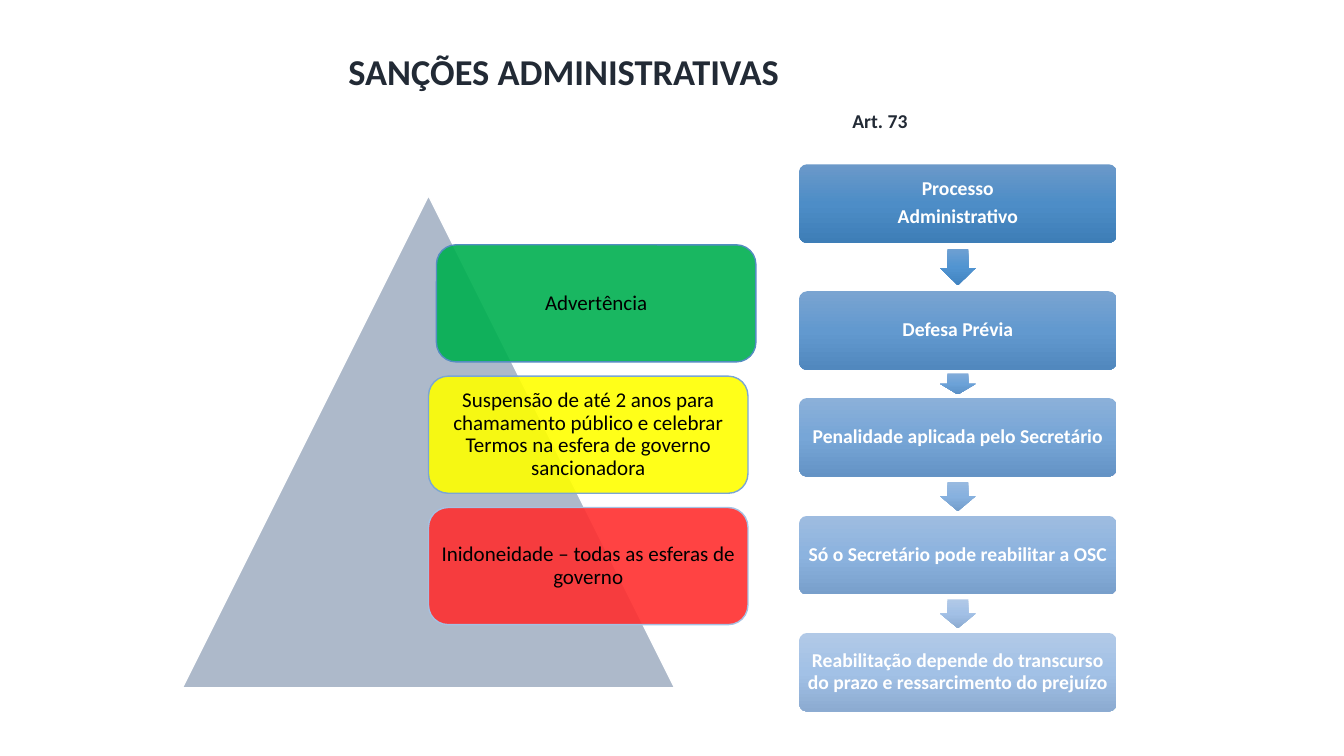
from copy import deepcopy

from lxml.etree import SubElement
from pptx import Presentation
from pptx.dml.color import RGBColor
from pptx.enum.shapes import MSO_SHAPE
from pptx.enum.text import MSO_ANCHOR, MSO_AUTO_SIZE, PP_ALIGN
from pptx.oxml.ns import qn
from pptx.util import Cm, Pt


def color(value):
    return RGBColor.from_string(value)


class SlideBuilder:
    font_name = "Calibri"
    inset = Cm(0.15)

    def __init__(self, slide):
        self.slide = slide

    def shape(self, kind, left, top, width, height, adjustments=()):
        shape = self.slide.shapes.add_shape(kind, Cm(left), Cm(top), Cm(width), Cm(height))
        shape.shadow.inherit = False
        for index, value in enumerate(adjustments):
            shape.adjustments[index] = value
        return shape

    def solid(self, shape, fill, line, opacity=100):
        shape.fill.solid()
        shape.fill.fore_color.rgb = color(fill)
        if opacity < 100:
            rgb = shape._element.spPr.find(qn("a:solidFill")).find(qn("a:srgbClr"))
            SubElement(rgb, qn("a:alpha"), val=str(opacity * 1000))
        shape.line.color.rgb = color(line)
        shape.line.width = Pt(1)

    def gradient(self, shape, colors):
        shape.fill.gradient()
        shape.fill.gradient_angle = 270
        stop_list = shape._element.spPr.find(qn("a:gradFill")).find(qn("a:gsLst"))
        stop_list.append(deepcopy(stop_list[0]))
        for stop, position, value in zip(shape.fill.gradient_stops, (0, 0.5, 1), colors):
            stop.position = position
            stop.color.rgb = color(value)
        shape.line.fill.background()

    def style(self, paragraph, size, font_color, bold):
        paragraph.font.name = self.font_name
        paragraph.font.size = Pt(size)
        paragraph.font.bold = bold
        paragraph.font.color.rgb = color(font_color)

    def label(self, shape, lines, size, font_color, bold=False):
        frame = shape.text_frame
        frame.word_wrap = True
        frame.vertical_anchor = MSO_ANCHOR.MIDDLE
        frame.margin_left = frame.margin_right = self.inset
        frame.margin_top = frame.margin_bottom = self.inset
        frame.text = "\n".join(lines)
        for paragraph in frame.paragraphs:
            paragraph.alignment = PP_ALIGN.CENTER
            paragraph.line_spacing = 0.9
            paragraph.space_after = Pt(5)
            self.style(paragraph, size, font_color, bold)

    def triangle(self, left, top, side):
        triangle = self.shape(MSO_SHAPE.ISOSCELES_TRIANGLE, left, top, side, side)
        self.solid(triangle, "ADB9CA", "FFFFFF")

    def sanction(self, left, top, text, fill, line):
        card = self.shape(MSO_SHAPE.ROUNDED_RECTANGLE, left, top, 8.05, 2.95)
        self.solid(card, fill, line, opacity=90)
        self.label(card, [text], 15, "000000")

    def step(self, left, top, width, height, lines, colors):
        box = self.shape(MSO_SHAPE.ROUNDED_RECTANGLE, left, top, width, height, (0.1,))
        self.gradient(box, colors)
        self.label(box, lines, 14, "FFFFFF", bold=True)

    def down_arrow(self, center, gap_top, gap_bottom, colors):
        gap = gap_bottom - gap_top
        length, width = 0.75 * gap, 0.89
        arrow = self.shape(MSO_SHAPE.DOWN_ARROW, center - width / 2,
                           gap_top + (gap - length) / 2, width, length,
                           (0.6, 0.5 * min(1, width / length)))
        self.gradient(arrow, colors)

    def heading(self, title, article):
        box = self.slide.shapes.add_textbox(Cm(8.53), Cm(1.12), Cm(15.4), Cm(2.49))
        frame = box.text_frame
        frame.word_wrap = True
        frame.auto_size = MSO_AUTO_SIZE.SHAPE_TO_FIT_TEXT
        frame.text = f"{title}\n{article}"
        title_paragraph, article_paragraph = frame.paragraphs
        article_paragraph._p.get_or_add_pPr().set("marL", str(Cm(12.7)))
        article_paragraph.space_before = Pt(11)
        self.style(title_paragraph, 26, "222A35", True)
        self.style(article_paragraph, 14, "222A35", True)


SANCTIONS = [
    (11.0, "Advertência", "00B050", "538DC1"),
    (10.8, "Suspensão de até 2 anos para chamamento público e celebrar "
           "Termos na esfera de governo sancionadora", "FFFF00", "7BA6D3"),
    (10.8, "Inidoneidade – todas as esferas de governo", "FF2F2F", "A5C1E3"),
]
STEPS = [
    (4.14, ["Processo", "Administrativo"], ("6B99C9", "4D8DC7", "3E7EB7")),
    (7.34, ["Defesa Prévia"], ("7AA4D1", "6299CF", "5188BE")),
    (10.03, ["Penalidade aplicada pelo Secretário"], ("8BB0D9", "77A6D7", "6493C5")),
    (13.0, ["Só o Secretário pode reabilitar a OSC"], ("9EBCE0", "8CB3DF", "789FCB")),
    (15.95, ["Reabilitação depende do transcurso do prazo e ressarcimento do prejuízo"],
     ("B1C9E7", "A2C1E6", "8CABD1")),
]
ARROW_COLORS = [
    ("6EA0D2", "5194D1", "4184C1"),
    ("83ACD9", "6CA2D8", "5A90C6"),
    ("99BAE0", "87B1DF", "739DCB"),
    ("B1C9E7", "A2C0E6", "8CABD1"),
]
STEP_LEFT, STEP_WIDTH, STEP_HEIGHT = 20.14, 8.0, 1.98


def main():
    presentation = Presentation()
    presentation.slide_width = Cm(33.87)
    presentation.slide_height = Cm(19.05)
    builder = SlideBuilder(presentation.slides.add_slide(presentation.slide_layouts[6]))

    builder.triangle(4.6, 4.93, 12.4)
    for index, (left, text, fill, line) in enumerate(SANCTIONS):
        builder.sanction(left, 6.17 + 3.31 * index, text, fill, line)

    for top, lines, colors in STEPS:
        builder.step(STEP_LEFT, top, STEP_WIDTH, STEP_HEIGHT, lines, colors)
    for upper, lower, colors in zip(STEPS, STEPS[1:], ARROW_COLORS):
        builder.down_arrow(STEP_LEFT + STEP_WIDTH / 2, upper[0] + STEP_HEIGHT, lower[0], colors)

    builder.heading("SANÇÕES ADMINISTRATIVAS", "Art. 73")
    presentation.save("out.pptx")


if __name__ == "__main__":
    main()
